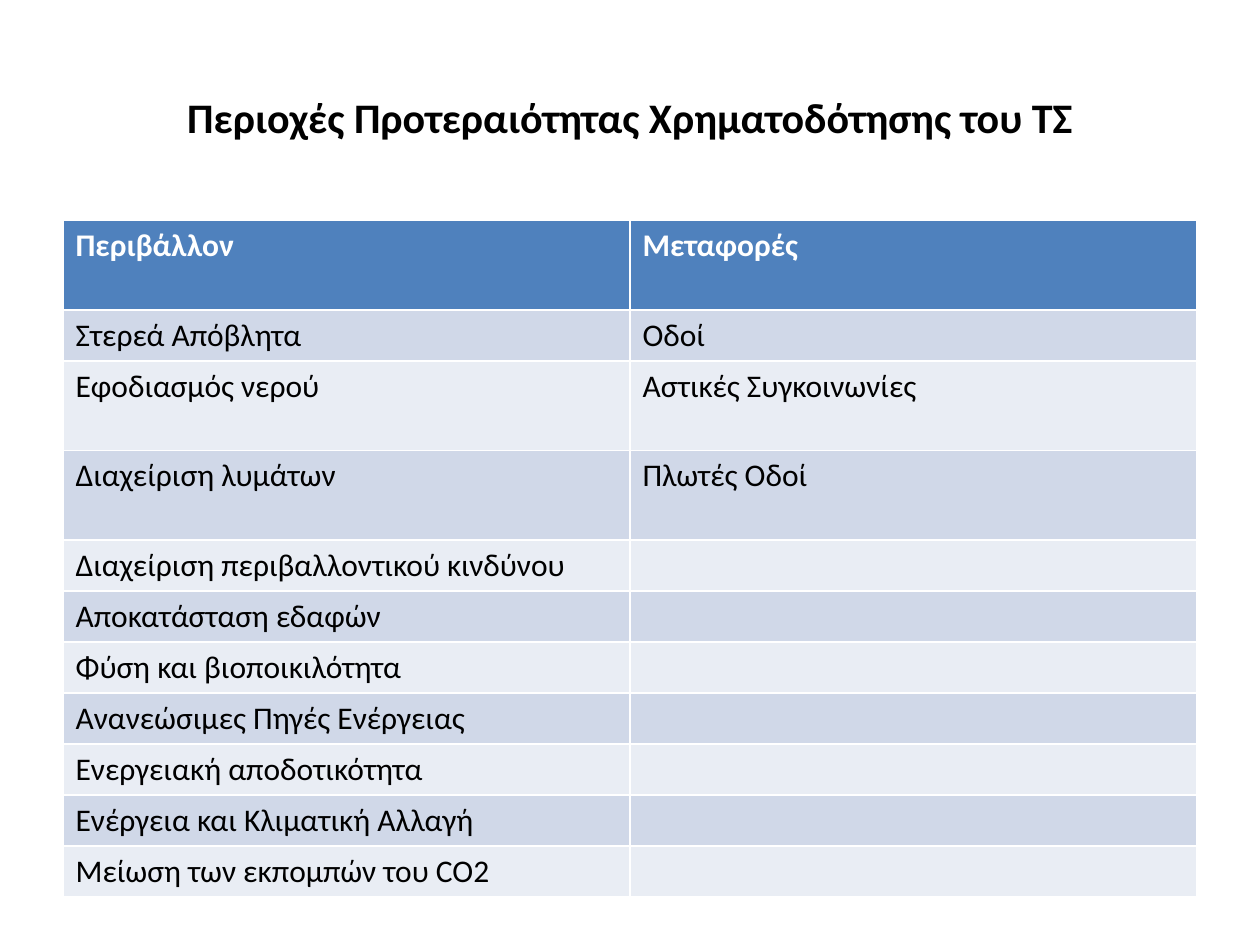
from pptx import Presentation
from pptx.dml.color import RGBColor
from pptx.enum.text import MSO_ANCHOR, PP_ALIGN
from pptx.util import Inches, Pt

TITLE = "Περιοχές Προτεραιότητας Χρηματοδότησης του ΤΣ"
ROWS = [
    ("Περιβάλλον", "Μεταφορές"),
    ("Στερεά Απόβλητα", "Οδοί"),
    ("Εφοδιασμός νερού", "Αστικές Συγκοινωνίες"),
    ("Διαχείριση λυμάτων", "Πλωτές Οδοί"),
    ("Διαχείριση περιβαλλοντικού κινδύνου", ""),
    ("Αποκατάσταση εδαφών", ""),
    ("Φύση και βιοποικιλότητα", ""),
    ("Ανανεώσιμες Πηγές Ενέργειας", ""),
    ("Ενεργειακή αποδοτικότητα", ""),
    ("Ενέργεια και Κλιματική Αλλαγή", ""),
    ("Μείωση των εκπομπών του CO2", ""),
]
TALL_ROWS = {0, 2, 3}
ROW_H, TALL_H = 0.405, 0.71
COL_W = 4.5

FONT = "Calibri"
BLACK = RGBColor(0x00, 0x00, 0x00)
WHITE = RGBColor(0xFF, 0xFF, 0xFF)
HEADER = RGBColor(0x4F, 0x81, 0xBD)
BANDS = [RGBColor(0xE9, 0xED, 0xF4), RGBColor(0xD0, 0xD8, 0xE8)]


def add_run(p, text, size, color, bold):
    r = p.add_run()
    r.text = text
    r.font.name = FONT
    r.font.size = Pt(size)
    r.font.bold = bold
    r.font.color.rgb = color


prs = Presentation()
prs.slide_width, prs.slide_height = Inches(10), Inches(7.5)
s = prs.slides.add_slide(prs.slide_layouts[6])

title = s.shapes.add_textbox(Inches(0.5), Inches(0.3), Inches(9), Inches(1.25))
tf = title.text_frame
tf.word_wrap = True
tf.vertical_anchor = MSO_ANCHOR.MIDDLE
p = tf.paragraphs[0]
p.alignment = PP_ALIGN.CENTER
add_run(p, TITLE, 24, BLACK, True)

heights = [TALL_H if i in TALL_ROWS else ROW_H for i in range(len(ROWS))]
# The default table style supplies the white borders.
table = s.shapes.add_table(len(ROWS), 2, Inches(0.5), Inches(1.75),
                           Inches(2 * COL_W), Inches(sum(heights))).table
for col in table.columns:
    col.width = Inches(COL_W)

for i, (texts, height) in enumerate(zip(ROWS, heights)):
    is_header = i == 0
    table.rows[i].height = Inches(height)
    for cell, text in zip(table.rows[i].cells, texts):
        cell.fill.solid()
        cell.fill.fore_color.rgb = HEADER if is_header else BANDS[i % 2]
        if text:
            add_run(cell.text_frame.paragraphs[0], text, 18,
                    WHITE if is_header else BLACK, is_header)

prs.save("out.pptx")
